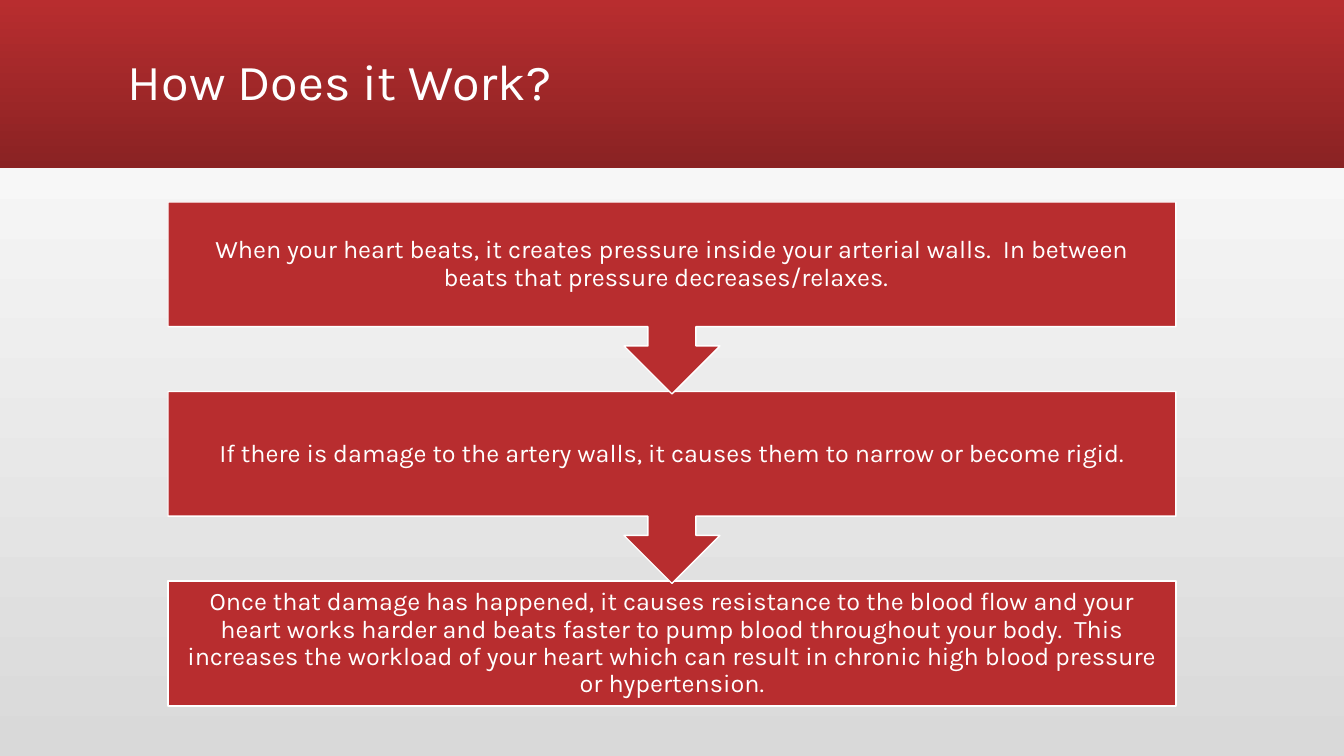
from pptx import Presentation
from pptx.dml.color import RGBColor
from pptx.enum.shapes import MSO_SHAPE
from pptx.enum.text import MSO_ANCHOR, PP_ALIGN
from pptx.util import Pt

PX = 914400 / 100.8
RED, DARK_RED, WHITE, GREY = "B82D2F", "8A2223", "FFFFFF", "D9D9D9"


def px(*lengths):
    """Turn pixel lengths into EMU."""
    return [round(length * PX) for length in lengths]


def write(frame, text, size, align, inset):
    frame.word_wrap = True
    frame.vertical_anchor = MSO_ANCHOR.MIDDLE
    frame.margin_left, frame.margin_top, frame.margin_right, frame.margin_bottom = px(*inset)
    paragraph = frame.paragraphs[0]
    paragraph.alignment = align
    paragraph.line_spacing = 0.9
    run = paragraph.add_run()
    run.text = text
    run.font.name = "Karla"
    run.font.size = Pt(size)
    run.font.color.rgb = RGBColor.from_string(WHITE)


presentation = Presentation()
presentation.slide_width, presentation.slide_height = px(1344, 756)
slide = presentation.slides.add_slide(presentation.slide_layouts[6])

# Background and header band
header = slide.shapes.add_shape(MSO_SHAPE.RECTANGLE, *px(0, 0, 1344, 168))
header.shadow.inherit = False
header.line.fill.background()
for fill, colours, angle in (
    (slide.background.fill, (GREY, WHITE), 90),
    (header.fill, (RED, DARK_RED), 270),
):
    fill.gradient()
    fill.gradient_angle = angle
    for stop, colour in zip(fill.gradient_stops, colours):
        stop.color.rgb = RGBColor.from_string(colour)

title = slide.shapes.add_textbox(*px(118, 11, 1109, 146))
write(title.text_frame, "How Does it Work?", 36, PP_ALIGN.LEFT, (10, 5, 10, 5))

# Steps, drawn from the last up so that each arrow tip lies over the next step
steps = [
    "When your heart beats, it creates pressure inside your arterial walls.  "
    "In between beats that pressure decreases/relaxes.  ",
    "If there is damage to the artery walls, it causes them to narrow or become rigid.",
    "Once that damage has happened, it causes resistance to the blood flow and your "
    "heart works harder and beats faster to pump blood throughout your body.  This "
    "increases the workload of your heart which can result in chronic high blood "
    "pressure or hypertension.",
]
STEP_TOP, STEP_PITCH = 202, 189.5
for index, text in reversed(list(enumerate(steps))):
    if index == len(steps) - 1:
        outline, height = MSO_SHAPE.RECTANGLE, 125
    else:
        outline, height = MSO_SHAPE.DOWN_ARROW_CALLOUT, 192
    step = slide.shapes.add_shape(
        outline, *px(168, STEP_TOP + index * STEP_PITCH, 1008, height)
    )
    step.shadow.inherit = False
    step.fill.solid()
    step.fill.fore_color.rgb = RGBColor.from_string(RED)
    step.line.color.rgb = RGBColor.from_string(WHITE)
    step.line.width = Pt(1)
    write(step.text_frame, text, 18, PP_ALIGN.CENTER, (14, 14, 14, 14))

presentation.save("out.pptx")
